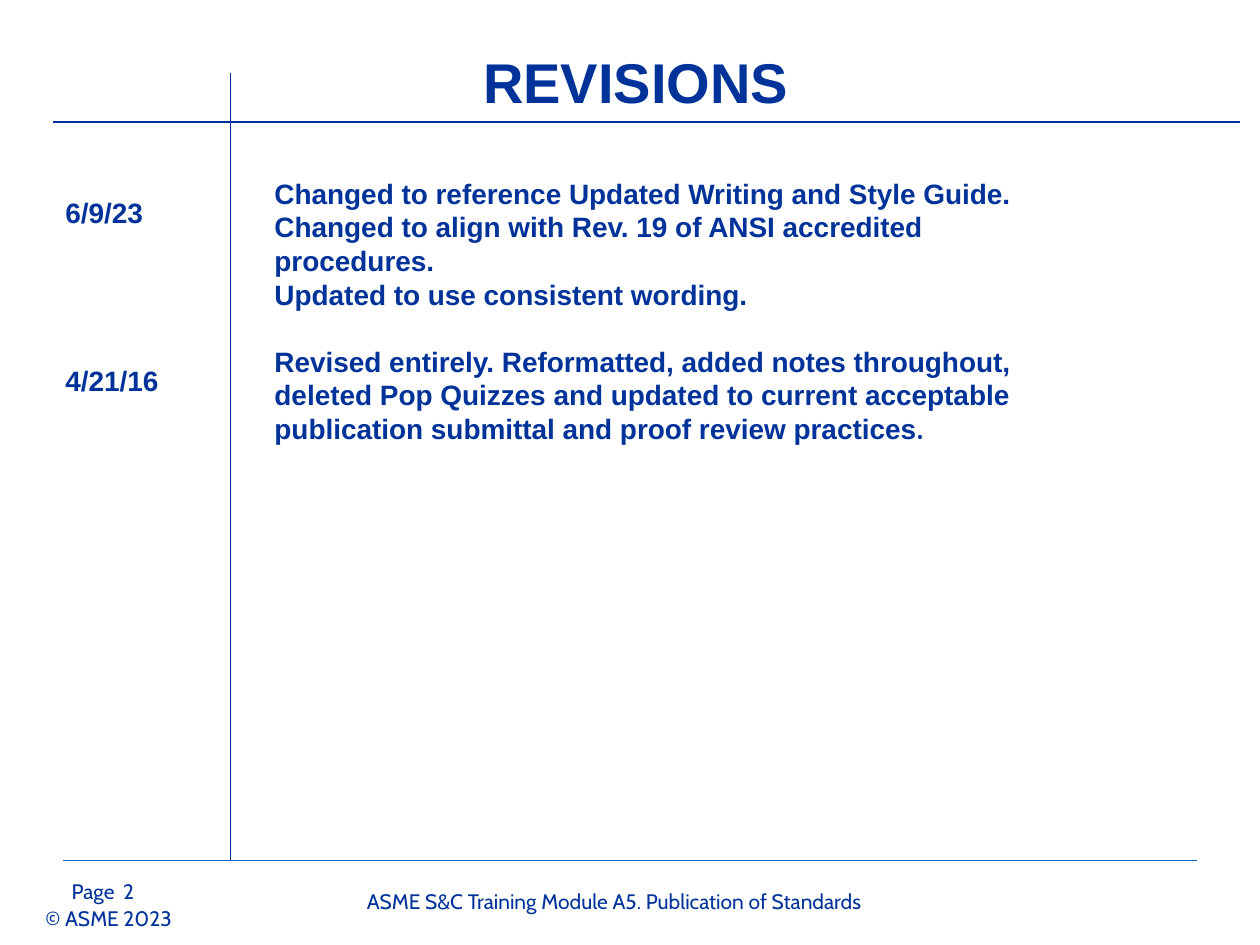
from lxml import etree
from pptx import Presentation
from pptx.dml.color import RGBColor
from pptx.enum.shapes import MSO_CONNECTOR
from pptx.enum.text import MSO_ANCHOR, PP_ALIGN
from pptx.oxml.ns import qn
from pptx.util import Inches, Pt

NAVY = RGBColor(0x00, 0x33, 0x99)
BLUE = RGBColor(0x00, 0x66, 0xCC)
LINE_PITCH = 19.2

DATES = ["6/9/23", "4/21/16"]
CHANGES = [
    "Changed to reference Updated Writing and Style Guide.",
    "Changed to align with Rev. 19 of ANSI accredited procedures.",
    "Updated to use consistent wording.",
    "Revised entirely. Reformatted, added notes throughout, deleted Pop "
    "Quizzes and updated to current acceptable publication submittal and "
    "proof review practices",
]


def add_text(slide, paragraphs, left, top, width, height, size=16, font="Arial",
             bold=True, align=PP_ALIGN.LEFT, anchor=MSO_ANCHOR.TOP,
             pitch=None, gap_before_last=0, top_inset=0.05, side_inset=0.1,
             wrap=True):
    box = slide.shapes.add_textbox(Inches(left), Inches(top),
                                   Inches(width), Inches(height))
    frame = box.text_frame
    frame.word_wrap = wrap
    frame.vertical_anchor = anchor
    frame.margin_top = Inches(top_inset)
    frame.margin_left = frame.margin_right = Inches(side_inset)
    for index, text in enumerate(paragraphs):
        paragraph = frame.paragraphs[0] if index == 0 else frame.add_paragraph()
        paragraph.alignment = align
        if pitch:
            paragraph.line_spacing = Pt(pitch)
        add_run(paragraph, text, size, font, bold)
    if gap_before_last:
        frame.paragraphs[-1].space_before = Pt(gap_before_last)
    return frame


def add_run(paragraph, text, size, font, bold):
    run = paragraph.add_run()
    run.text = text
    run.font.size = Pt(size)
    run.font.name = font
    run.font.bold = bold
    run.font.color.rgb = NAVY


def add_rule(slide, x1, y1, x2, y2, color=NAVY, weight=1):
    rule = slide.shapes.add_connector(MSO_CONNECTOR.STRAIGHT, Inches(x1),
                                      Inches(y1), Inches(x2), Inches(y2))
    rule.line.color.rgb = color
    rule.line.width = Pt(weight)
    etree.SubElement(rule._element.spPr, qn("a:effectLst"))


def add_footer(slide):
    style = dict(size=12, font="Cabin", bold=False)
    add_rule(slide, 0.5, 6.83, 9.5, 6.83, color=BLUE, weight=0.75)
    add_text(slide, ["Page"], 0.47, 6.92, 0.77, 0.26, **style)
    add_text(slide, ["© ASME 2023"], 0.36, 7.19, 1.04, 0.2,
             top_inset=0, side_inset=0, wrap=False, **style)
    add_text(slide, ["ASME S&C Training Module A5. Publication of Standards"],
             1.54, 7, 6.67, 0.26, align=PP_ALIGN.CENTER, **style)
    add_text(slide, ["2"], 0.88, 6.92, 0.47, 0.23, **style)


def add_revisions(slide):
    add_text(slide, ["REVISIONS"], 0.67, 0.33, 8.75, 0.63, size=32,
             align=PP_ALIGN.CENTER, anchor=MSO_ANCHOR.MIDDLE)
    add_text(slide, DATES, 0.42, 0.97, 1.42, 5.95, pitch=LINE_PITCH,
             gap_before_last=4 * LINE_PITCH, top_inset=0.58)
    add_rule(slide, 1.83, 0.58, 1.83, 6.83)
    add_rule(slide, 0.42, 0.97, 9.84, 0.97)
    changes = add_text(slide, CHANGES, 2.08, 1.35, 6.58, 2.52,
                       pitch=LINE_PITCH, gap_before_last=LINE_PITCH)
    add_run(changes.paragraphs[-1], ".", 16, "Cambria", True)


def main():
    deck = Presentation()
    deck.slide_width, deck.slide_height = Inches(10), Inches(7.5)
    slide = deck.slides.add_slide(deck.slide_layouts[6])
    add_footer(slide)
    add_revisions(slide)
    deck.save("out.pptx")


if __name__ == "__main__":
    main()
